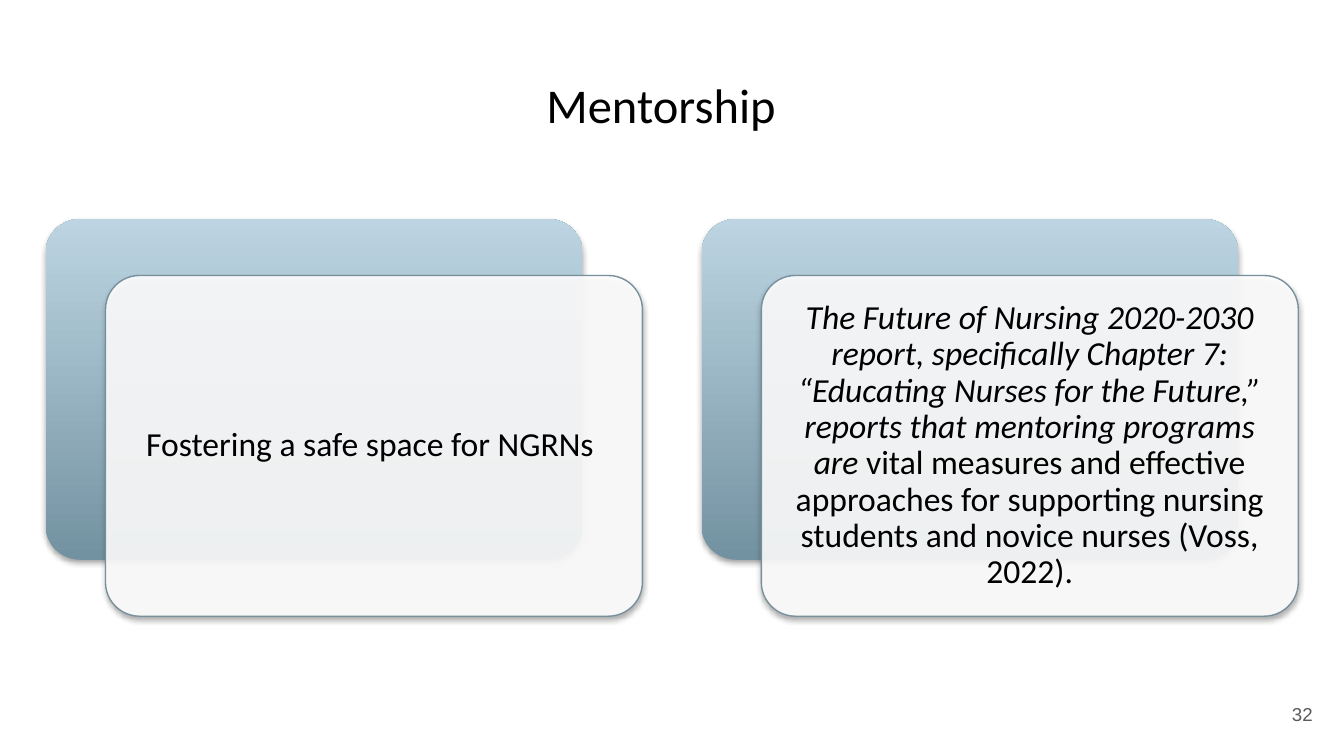
from lxml import etree
from pptx import Presentation
from pptx import util as u
from pptx.dml.color import RGBColor
from pptx.enum import shapes, text
from pptx.oxml.ns import qn

SCALE = 4572
WIDE, HIGH = 2000, 1125
CARDS = [
    [("Fostering a safe space for NGRNs ", False)],
    [
        ("The Future of Nursing 2020-2030 report, specifically Chapter 7: "
         "“Educating Nurses for the Future,” reports that mentoring programs are", True),
        (" vital measures and effective approaches for supporting nursing "
         "students and novice nurses (Voss, 2022).", False),
    ],
]


def px(*nums):
    """Turn px lengths into EMU."""
    return [u.Emu(n * SCALE) for n in nums]


def paint(code):
    """Turn a hex string into a colour."""
    return RGBColor.from_string(code)


def write(slide, box, runs, size=18, font="Calibri", color="000000",
          align="CENTER", inset=20, right=None, lead=0.9):
    """Add a text box holding one paragraph of (words, italic) runs."""
    frame = slide.shapes.add_textbox(*px(*box)).text_frame
    frame.word_wrap = True
    frame.vertical_anchor = text.MSO_ANCHOR.MIDDLE
    frame.margin_left, frame.margin_top, frame.margin_bottom = px(inset, inset, inset)
    frame.margin_right = px(right or inset)[0]
    para = frame.paragraphs[0]
    para.alignment = getattr(text.PP_ALIGN, align)
    para.line_spacing = lead
    for words, slant in runs:
        run = para.add_run()
        run.text = words
        run.font.size = u.Pt(size)
        run.font.name = font
        run.font.italic = slant
        run.font.color.rgb = paint(color)


def shade(shape):
    """Give a shape a soft shadow straight below it."""
    shape.shadow.inherit = False
    effects = shape._element.spPr.find(qn("a:effectLst"))
    outer = etree.SubElement(effects, qn("a:outerShdw"), blurRad=str(u.Pt(3.1)),
                             dist=str(u.Pt(1.8)), dir="5400000", rotWithShape="0")
    tone = etree.SubElement(outer, qn("a:srgbClr"), val="000000")
    etree.SubElement(tone, qn("a:alpha"), val="35000")


def panel(slide, box):
    """Add a rounded panel with a shadow."""
    shape = slide.shapes.add_shape(shapes.MSO_SHAPE.ROUNDED_RECTANGLE, *px(*box))
    shape.adjustments[0] = 0.1
    shade(shape)
    return shape


def card(slide, box, runs):
    """Draw a gradient panel with a clear white panel and text over it."""
    left, top, wide, high = box
    back = panel(slide, box)
    back.fill.gradient()
    back.fill.gradient_angle = 90
    for stop, code in zip(back.fill.gradient_stops, ("7392A1", "BDD5E2")):
        stop.color.rgb = paint(code)
    back.line.fill.background()

    left, top = left + 89, top + 84
    front = panel(slide, (left, top, wide, high))
    front.fill.solid()
    front.fill.fore_color.rgb = paint("FFFFFF")
    tone = front._element.spPr.find(qn("a:solidFill"))[0]
    etree.SubElement(tone, qn("a:alpha"), val="90000")
    front.line.color.rgb = paint("78909C")
    front.line.width = u.Pt(0.75)
    write(slide, (left + 15, top + 15, wide - 30, high - 30), runs, inset=14)


def build():
    """Build the slide and save it."""
    deck = Presentation()
    deck.slide_width, deck.slide_height = px(WIDE, HIGH)
    slide = deck.slides.add_slide(deck.slide_layouts[6])
    write(slide, (68, 98, 1864, 126), [("Mentorship", False)], size=26, right=52)
    for spot, runs in enumerate(CARDS):
        card(slide, (68 + spot * 976, 326, 799, 507), runs)
    write(slide, (1853, 1020, 120, 86), [("32", False)], size=10, font="Arial",
          color="595959", align="RIGHT", lead=1.0)
    deck.save("out.pptx")


if __name__ == "__main__":
    build()
